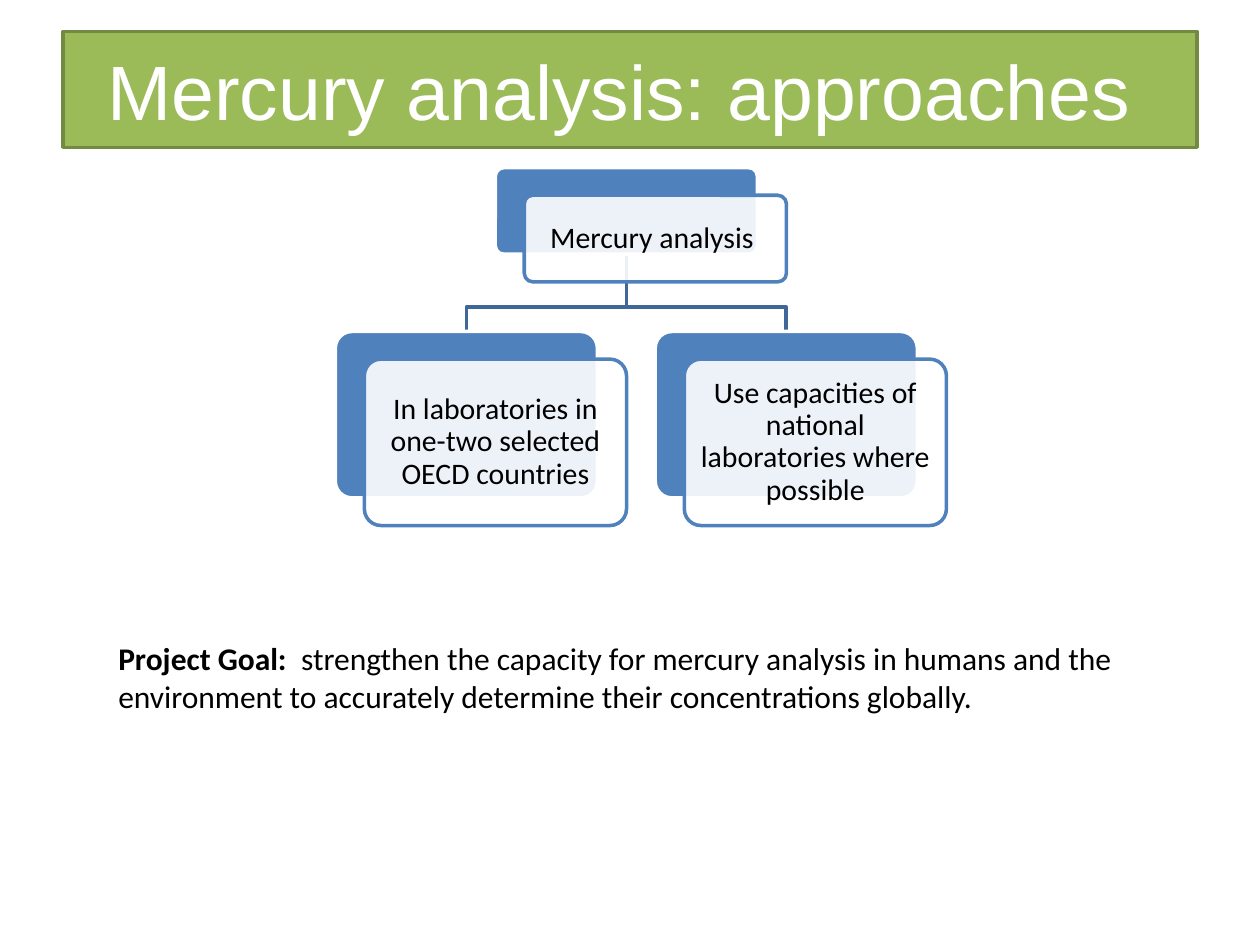
from dataclasses import dataclass

import lxml.etree
import pptx
import pptx.dml.color
import pptx.enum.shapes
import pptx.enum.text
import pptx.oxml.ns
import pptx.util

Pt = pptx.util.Pt
RGBColor = pptx.dml.color.RGBColor
ALIGN = pptx.enum.text.PP_ALIGN
ANCHOR = pptx.enum.text.MSO_ANCHOR

WHITE = RGBColor(0xFF, 0xFF, 0xFF)
BLACK = RGBColor(0x00, 0x00, 0x00)
GREEN = RGBColor(0x9B, 0xBB, 0x59)
DARK_GREEN = RGBColor(0x73, 0x8A, 0x42)
BLUE = RGBColor(0x4F, 0x81, 0xBD)
DARK_BLUE = RGBColor(0x3F, 0x67, 0x97)

CARD_WIDTH = 149.8
FRONT_SHIFT_X, FRONT_SHIFT_Y = 16.6, 15.8
BRANCH_DROP = 30.2
LINE_WIDTH = 2


@dataclass
class Card:
    text: str
    left: float
    top: float
    height: float

    @property
    def center(self) -> float:
        return self.left + CARD_WIDTH / 2

    @property
    def bottom(self) -> float:
        return self.top + self.height


ROOT = Card("Mercury analysis ", 283, 95.8, 49.5)
BRANCHES = [
    Card("In laboratories in one-two selected OECD countries", 191.6, 189.4, 95.1),
    Card("Use capacities of national laboratories where possible", 374.4, 189.4, 95.1),
]


def style_shape(shape, fill: RGBColor, line: RGBColor) -> None:
    shape.fill.solid()
    shape.fill.fore_color.rgb = fill
    shape.line.color.rgb = line
    shape.line.width = Pt(LINE_WIDTH)
    shape.shadow.inherit = False


def style_font(font, name: str, size: float, color: RGBColor) -> None:
    font.name = name
    font.size = Pt(size)
    font.color.rgb = color


def set_opacity(shape, percent: int) -> None:
    color = shape.fill._xPr.find(".//" + pptx.oxml.ns.qn("a:srgbClr"))
    alpha = lxml.etree.SubElement(color, pptx.oxml.ns.qn("a:alpha"))
    alpha.set("val", str(percent * 1000))


def add_branch_line(slide, parent: Card, child: Card) -> None:
    branch_y = parent.bottom + BRANCH_DROP
    builder = slide.shapes.build_freeform(Pt(parent.center), Pt(parent.bottom))
    corners = [(parent.center, branch_y), (child.center, branch_y), (child.center, child.top)]
    builder.add_line_segments([(Pt(x), Pt(y)) for x, y in corners], close=False)
    shape = builder.convert_to_shape()
    shape.fill.background()
    shape.line.color.rgb = DARK_BLUE
    shape.line.width = Pt(LINE_WIDTH)
    shape.shadow.inherit = False


def add_rounded_box(slide, card: Card, shift_x: float, shift_y: float,
                    fill: RGBColor, line: RGBColor):
    shape = slide.shapes.add_shape(
        pptx.enum.shapes.MSO_SHAPE.ROUNDED_RECTANGLE,
        Pt(card.left + shift_x), Pt(card.top + shift_y), Pt(CARD_WIDTH), Pt(card.height))
    shape.adjustments[0] = 0.1
    style_shape(shape, fill, line)
    return shape


def add_card(slide, card: Card) -> None:
    add_rounded_box(slide, card, 0, 0, BLUE, WHITE)
    front = add_rounded_box(slide, card, FRONT_SHIFT_X, FRONT_SHIFT_Y, WHITE, BLUE)
    set_opacity(front, 90)
    frame = front.text_frame
    frame.word_wrap = True
    frame.vertical_anchor = ANCHOR.MIDDLE
    frame.margin_left = frame.margin_right = Pt(5)
    frame.margin_top = frame.margin_bottom = Pt(5)
    paragraph = frame.paragraphs[0]
    paragraph.text = card.text
    paragraph.alignment = ALIGN.CENTER
    paragraph.line_spacing = 0.9
    style_font(paragraph.font, "Calibri", 17, BLACK)


def add_title(slide, text: str) -> None:
    title = slide.shapes.title
    title.left, title.top, title.width, title.height = Pt(36), Pt(18), Pt(648), Pt(66.2)
    style_shape(title, GREEN, DARK_GREEN)
    title.text_frame.vertical_anchor = ANCHOR.MIDDLE
    paragraph = title.text_frame.paragraphs[0]
    paragraph.text = text
    paragraph.alignment = ALIGN.CENTER
    style_font(paragraph.font, "Arial", 44, WHITE)


def add_goal(slide, label: str, text: str) -> None:
    box = slide.shapes.add_textbox(Pt(60.5), Pt(361.5), Pt(588), Pt(51))
    frame = box.text_frame
    frame.word_wrap = True
    frame.auto_size = pptx.enum.text.MSO_AUTO_SIZE.SHAPE_TO_FIT_TEXT
    paragraph = frame.paragraphs[0]
    style_font(paragraph.font, "Calibri", 18, BLACK)
    label_run = paragraph.add_run()
    label_run.text = label
    label_run.font.bold = True
    paragraph.add_run().text = text


def main() -> None:
    presentation = pptx.Presentation()
    presentation.slide_width, presentation.slide_height = Pt(720), Pt(540)
    slide = presentation.slides.add_slide(presentation.slide_layouts[5])

    add_title(slide, "Mercury analysis: approaches ")

    # Hierarchy: lines lie behind the cards
    for branch in reversed(BRANCHES):
        add_branch_line(slide, ROOT, branch)
    for card in [ROOT, *BRANCHES]:
        add_card(slide, card)

    # Project goal
    add_goal(slide, "Project Goal:  ",
             "strengthen the capacity for mercury analysis in humans and the environment "
             "to accurately determine their concentrations globally.")

    presentation.save("out.pptx")


if __name__ == "__main__":
    main()
